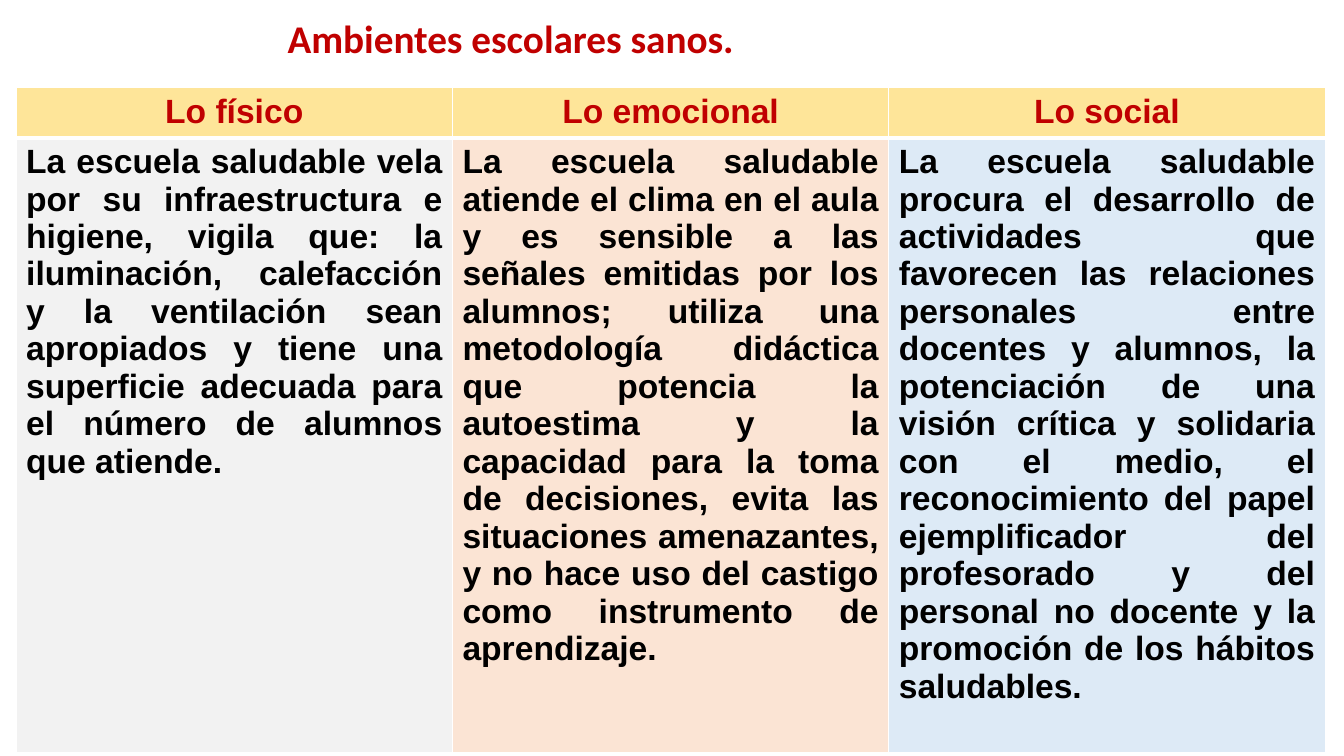
from lxml.etree import SubElement
from pptx import Presentation
from pptx.dml.color import RGBColor
from pptx.enum.text import PP_ALIGN
from pptx.oxml.ns import qn
from pptx.util import Inches, Pt

RED = RGBColor(0xC0, 0x00, 0x00)
BLACK = RGBColor(0x00, 0x00, 0x00)
WHITE = RGBColor(0xFF, 0xFF, 0xFF)
YELLOW = RGBColor(0xFE, 0xE5, 0x99)
GREY = RGBColor(0xF2, 0xF2, 0xF2)
PEACH = RGBColor(0xFB, 0xE4, 0xD4)
BLUE = RGBColor(0xDD, 0xEA, 0xF6)

WIDTH, HEIGHT = 13.33, 7.5

ENVIRONMENTS = [
    ("Lo físico", GREY,
     "La escuela saludable vela por su infraestructura e higiene, vigila que: "
     "la iluminación, calefacción y la ventilación sean apropiados y tiene una "
     "superficie adecuada para el número de alumnos que atiende."),
    ("Lo emocional", PEACH,
     "La escuela saludable atiende el clima en el aula y es sensible a las "
     "señales emitidas por los alumnos; utiliza una metodología didáctica que "
     "potencia la autoestima y la capacidad para la toma de decisiones, evita "
     "las situaciones amenazantes, y no hace uso del castigo como instrumento "
     "de aprendizaje."),
    ("Lo social", BLUE,
     "La escuela saludable procura el desarrollo de actividades que favorecen "
     "las relaciones personales entre docentes y alumnos, la potenciación de "
     "una visión crítica y solidaria con el medio, el reconocimiento del papel "
     "ejemplificador del profesorado y del personal no docente y la promoción "
     "de los hábitos saludables."),
]


class SlideBuilder:
    """Draws styled elements on one slide, placed by shares of its size."""

    def __init__(self, slide):
        self.slide = slide
        self.title_font = "Calibri"
        self.table_font = "Arial"

    def across(self, share):
        return Inches(WIDTH * share)

    def down(self, share):
        return Inches(HEIGHT * share)

    def set_text(self, text_frame, text, font, size, color, alignment):
        text_frame.text = text
        text_frame.word_wrap = True
        paragraph = text_frame.paragraphs[0]
        paragraph.alignment = alignment
        for run in paragraph.runs:
            run.font.name = font
            run.font.size = Pt(size)
            run.font.bold = True
            run.font.color.rgb = color

    def title(self, text, left, top, width, height):
        box = self.slide.shapes.add_textbox(
            self.across(left), self.down(top),
            self.across(width), self.down(height))
        self.set_text(box.text_frame, text, self.title_font, 28, RED, PP_ALIGN.CENTER)

    def borders(self, cell, top, bottom):
        properties = cell._tc.get_or_add_tcPr()
        for side, points in (("L", 1), ("R", 1), ("T", top), ("B", bottom)):
            line = SubElement(properties, qn(f"a:ln{side}"), w=str(Pt(points)))
            fill = SubElement(line, qn("a:solidFill"))
            SubElement(fill, qn("a:srgbClr"), val=str(WHITE))

    def cell(self, cell, text, fill, color, alignment, top, bottom):
        self.set_text(cell.text_frame, text, self.table_font, 24, color, alignment)
        self.borders(cell, top, bottom)
        cell.fill.solid()
        cell.fill.fore_color.rgb = fill

    def table(self, columns, left, top, width, row_heights):
        frame = self.slide.shapes.add_table(
            len(row_heights), len(columns), self.across(left), self.down(top),
            self.across(width), self.down(sum(row_heights)))
        table = frame.table
        for row, height in zip(table.rows, row_heights):
            row.height = self.down(height)
        for index, (heading, fill, body) in enumerate(columns):
            self.cell(table.cell(0, index), heading, YELLOW, RED,
                      PP_ALIGN.CENTER, top=1, bottom=3)
            self.cell(table.cell(1, index), body, fill, BLACK,
                      PP_ALIGN.JUSTIFY, top=3, bottom=1)


def main():
    presentation = Presentation()
    presentation.slide_width = Inches(WIDTH)
    presentation.slide_height = Inches(HEIGHT)
    builder = SlideBuilder(presentation.slides.add_slide(presentation.slide_layouts[6]))
    builder.title("Ambientes escolares sanos.", 0.02, 0.012, 0.72, 0.076)
    builder.table(ENVIRONMENTS, 0.012, 0.116, 0.974, (0.066, 0.813))
    presentation.save("out.pptx")


if __name__ == "__main__":
    main()
